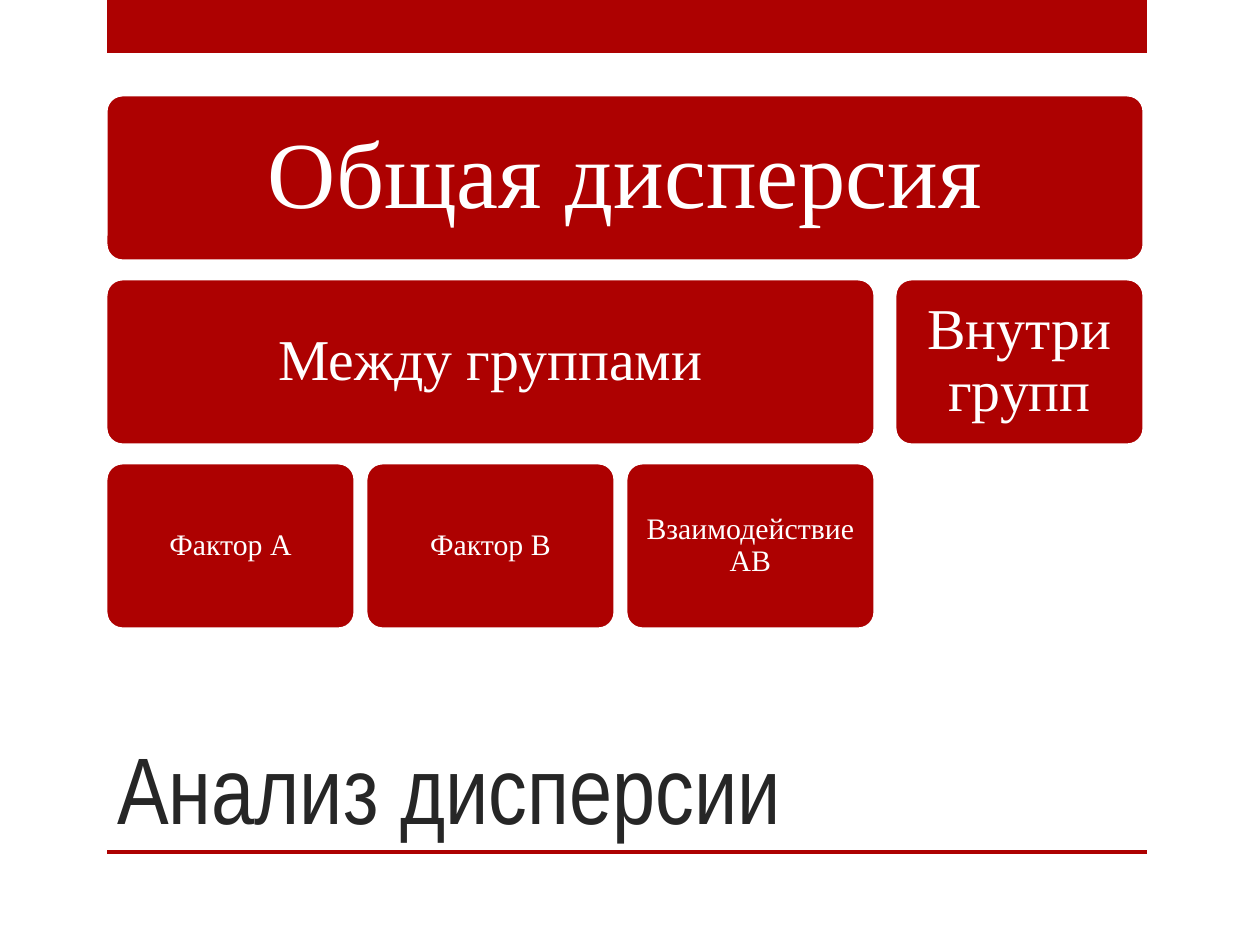
from dataclasses import dataclass

from pptx import Presentation
from pptx.dml.color import RGBColor
from pptx.enum.shapes import MSO_SHAPE
from pptx.enum.text import MSO_ANCHOR, PP_ALIGN
from pptx.shapes.autoshape import Shape
from pptx.slide import Slide
from pptx.text.text import TextFrame
from pptx.util import Emu, Pt

SCALE = 914400 / 126
COLORS = {"red": "AD0101", "white": "FFFFFF", "dark": "262626"}
LEFT, TOP = 106, 95
WIDTH, HEIGHT = 249, 166
STEP, PITCH = 260, 184
INNER = 895


@dataclass(frozen=True)
class Level:
    size: int
    inset: int


@dataclass(frozen=True)
class Box:
    text: str
    row: int
    left: int
    width: int


LEVELS = (Level(54, 29), Level(33, 18), Level(17, 9))
FACTORS = ("Фактор A", "Фактор B", "Взаимодействие AB")
BOXES = (
    Box("Общая дисперсия", 0, LEFT, INNER + WIDTH - LEFT),
    Box("Между группами", 1, LEFT, 2 * STEP + WIDTH),
    Box("Внутри групп", 1, INNER, WIDTH),
    *(Box(name, 2, LEFT + i * STEP, WIDTH) for i, name in enumerate(FACTORS)),
)
BARS = ((107, 0, 1040, 53), (107, 850, 1040, 4))


def px(value: int) -> Emu:
    return Emu(round(value * SCALE))


def color(name: str) -> RGBColor:
    return RGBColor.from_string(COLORS[name])


def add_block(slide: Slide, kind: MSO_SHAPE, *area: int) -> Shape:
    shape = slide.shapes.add_shape(kind, *map(px, area))
    shape.shadow.inherit = False
    shape.fill.solid()
    shape.fill.fore_color.rgb = color("red")
    shape.line.fill.background()
    return shape


def set_text(frame: TextFrame, text: str, size: int, face: str, tone: str) -> None:
    frame.word_wrap = True
    para = frame.paragraphs[0]
    para.text = text
    para.font.size = Pt(size)
    para.font.name = face
    para.font.color.rgb = color(tone)


def add_box(slide: Slide, box: Box) -> None:
    level = LEVELS[box.row]
    top = TOP + box.row * PITCH
    shape = add_block(slide, MSO_SHAPE.ROUNDED_RECTANGLE, box.left, top, box.width, HEIGHT)
    shape.adjustments[0] = 0.1
    shape.line.color.rgb = color("white")
    shape.line.width = Pt(1.75)
    frame = shape.text_frame
    set_text(frame, box.text, level.size, "Times New Roman", "white")
    frame.vertical_anchor = MSO_ANCHOR.MIDDLE
    frame.margin_left = frame.margin_right = px(level.inset)
    frame.margin_top = frame.margin_bottom = px(level.inset)
    para = frame.paragraphs[0]
    para.alignment = PP_ALIGN.CENTER
    para.line_spacing = 0.9


def add_title(slide: Slide, text: str) -> None:
    frame = slide.shapes.add_textbox(*map(px, (105, 630, 935, 220))).text_frame
    set_text(frame, text, 54, "Arial Narrow", "dark")
    frame.vertical_anchor = MSO_ANCHOR.BOTTOM


def main() -> None:
    """Build the variance breakdown slide."""
    deck = Presentation()
    deck.slide_width, deck.slide_height = px(1260), px(945)
    slide = deck.slides.add_slide(deck.slide_layouts[6])
    for bar in BARS:
        add_block(slide, MSO_SHAPE.RECTANGLE, *bar)
    add_title(slide, "Анализ дисперсии")
    for box in BOXES:
        add_box(slide, box)
    deck.save("out.pptx")


if __name__ == "__main__":
    main()
